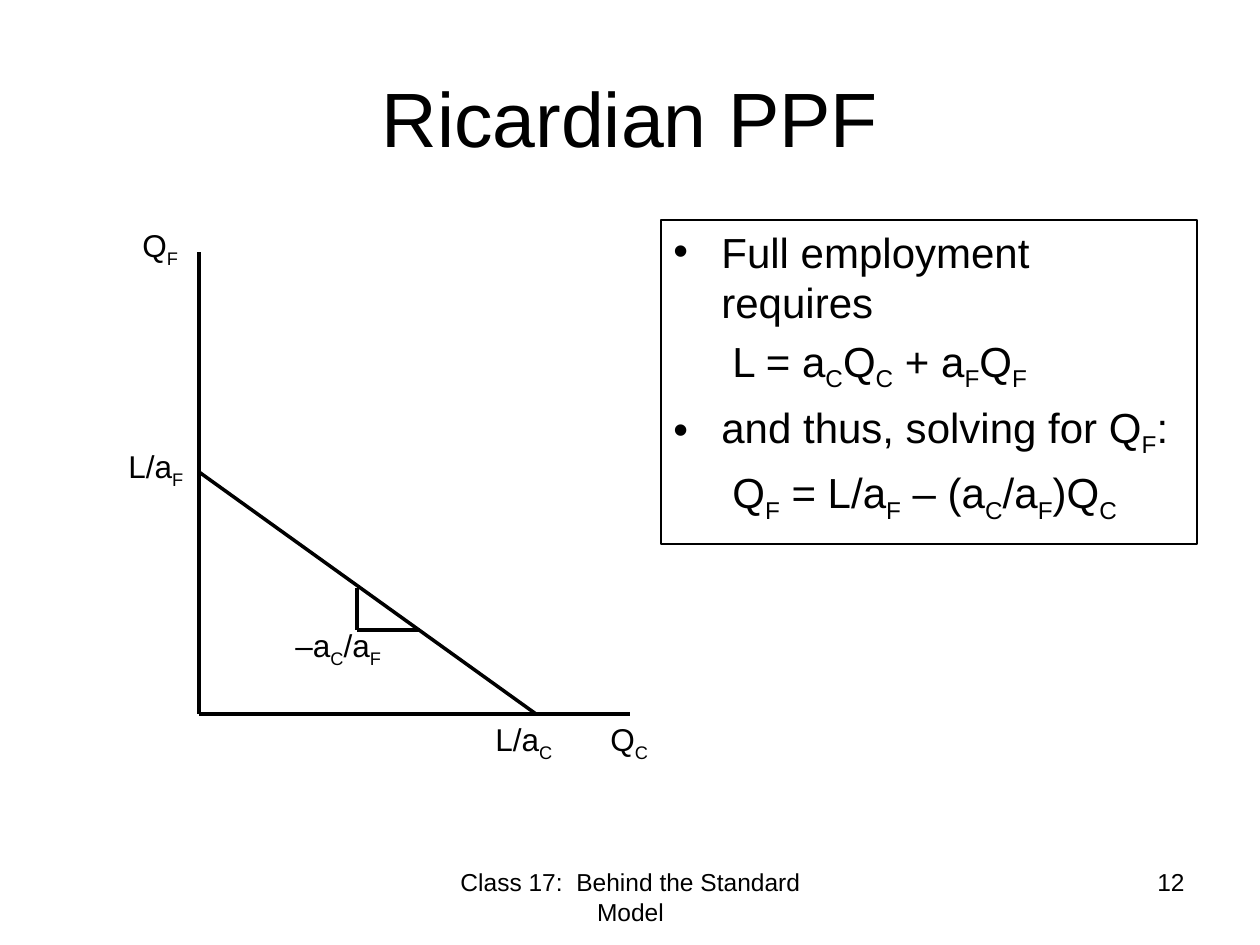
import dataclasses

import lxml.etree
import pptx
import pptx.dml.color
import pptx.enum.shapes
import pptx.enum.text
import pptx.oxml.ns
import pptx.util

PX = 914400 / 126
ALIGN = pptx.enum.text.PP_ALIGN
ANCHOR = pptx.enum.text.MSO_ANCHOR
qn = pptx.oxml.ns.qn


def px(n):
    return pptx.util.Emu(round(n * PX))


@dataclasses.dataclass(frozen=True)
class Theme:
    font: str = "Arial"
    ink: pptx.dml.color.RGBColor = pptx.dml.color.RGBColor(0, 0, 0)
    paper: pptx.dml.color.RGBColor = pptx.dml.color.RGBColor(255, 255, 255)
    title: int = 44
    body: int = 24
    label: int = 18
    footer: int = 14
    thin: float = 0.75
    thick: float = 2


def write(p, text, *, theme, size, align=ALIGN.LEFT, before=0, indent=0, bullet=False):
    """Fill a paragraph; an underscore makes the next letter a subscript."""
    p.alignment = align
    p.space_before = pptx.util.Pt(before)
    pPr = p._p.get_or_add_pPr()
    pPr.set("marL", str(px(indent)))
    pPr.set("indent", str(-px(indent) if bullet else 0))
    if bullet:
        lxml.etree.SubElement(pPr, qn("a:buFont"), typeface=theme.font)
        lxml.etree.SubElement(pPr, qn("a:buChar"), char="•")
    else:
        lxml.etree.SubElement(pPr, qn("a:buNone"))
    first, *rest = text.split("_")
    pieces = [(first, False)]
    for part in rest:
        pieces += [(part[0], True), (part[1:], False)]
    for piece, subscript in pieces:
        if not piece:
            continue
        r = p.add_run()
        r.text = piece
        r.font.name = theme.font
        r.font.size = pptx.util.Pt(size)
        r.font.color.rgb = theme.ink
        if subscript:
            r._r.get_or_add_rPr().set("baseline", "-25000")


class Deck:
    def __init__(self, theme):
        self.theme = theme
        self.prs = pptx.Presentation()
        self.prs.slide_width, self.prs.slide_height = px(1260), px(945)
        self.s = None

    def slide(self, title, x, y, w, h):
        self.s = self.prs.slides.add_slide(self.prs.slide_layouts[5])
        fill = self.s.background.fill
        fill.solid()
        fill.fore_color.rgb = self.theme.paper
        sp = self.s.shapes.title
        sp.left, sp.top, sp.width, sp.height = map(px, (x, y, w, h))
        sp.text_frame.vertical_anchor = ANCHOR.MIDDLE
        write(sp.text_frame.paragraphs[0], title, theme=self.theme,
              size=self.theme.title, align=ALIGN.CENTER)

    def text(self, text, x, y, w, h, size, wrap=True, align=ALIGN.LEFT):
        sp = self.s.shapes.add_textbox(*map(px, (x, y, w, h)))
        sp.text_frame.word_wrap = wrap
        write(sp.text_frame.paragraphs[0], text, theme=self.theme, size=size, align=align)

    def line(self, x1, y1, x2, y2):
        c = self.s.shapes.add_connector(
            pptx.enum.shapes.MSO_CONNECTOR.STRAIGHT, *map(px, (x1, y1, x2, y2)))
        c.line.color.rgb = self.theme.ink
        c.line.width = pptx.util.Pt(self.theme.thick)
        lxml.etree.SubElement(c._element.spPr, qn("a:effectLst"))

    def panel(self, items, x, y, w, h):
        sp = self.s.shapes.add_shape(
            pptx.enum.shapes.MSO_SHAPE.RECTANGLE, *map(px, (x, y, w, h)))
        sp.shadow.inherit = False
        sp.fill.background()
        sp.line.color.rgb = self.theme.ink
        sp.line.width = pptx.util.Pt(self.theme.thin)
        tf = sp.text_frame
        tf.word_wrap = True
        tf.vertical_anchor = ANCHOR.TOP
        for i, (text, bullet) in enumerate(items):
            p = tf.add_paragraph() if i else tf.paragraphs[0]
            write(p, text, theme=self.theme, size=self.theme.body,
                  before=0.2 * self.theme.body, indent=48 if bullet else 59, bullet=bullet)


def main():
    theme = Theme()
    deck = Deck(theme)
    deck.slide("Ricardian PPF", 63, 38, 1134, 157)

    # Axes, frontier and slope triangle
    origin_x, origin_y = 199, 714
    corner_x, corner_y = 357, 630
    deck.line(origin_x, origin_y, 630, origin_y)
    deck.line(origin_x, origin_y, origin_x, 252)
    deck.line(origin_x, 472, 536, origin_y)
    deck.line(corner_x, 588, corner_x, corner_y)
    deck.line(420, corner_y, corner_x, corner_y)

    # Graph labels
    for text, x, y, w, h, wrap in (
        ("Q_C", 598, 714, 95, 89, True),
        ("Q_F", 130, 220, 95, 89, True),
        ("L/a_F", 116, 441, 83, 50, False),
        ("L/a_C", 483, 714, 84, 50, False),
        ("–a_C/a_F", 283, 620, 116, 50, False),
    ):
        deck.text(text, x, y, w, h, theme.label, wrap)

    # Derivation
    deck.panel([
        ("Full employment requires", True),
        ("L = a_CQ_C + a_FQ_F", False),
        ("and thus, solving for Q_F:", True),
        ("Q_F = L/a_F – (a_C/a_F)Q_C", False),
    ], 661, 220, 536, 324)

    # Footer and slide number
    deck.text("Class 17:  Behind the Standard Model", 431, 861, 399, 66,
              theme.footer, align=ALIGN.CENTER)
    deck.text("12", 903, 861, 294, 66, theme.footer, align=ALIGN.RIGHT)

    deck.prs.save("out.pptx")


if __name__ == "__main__":
    main()
